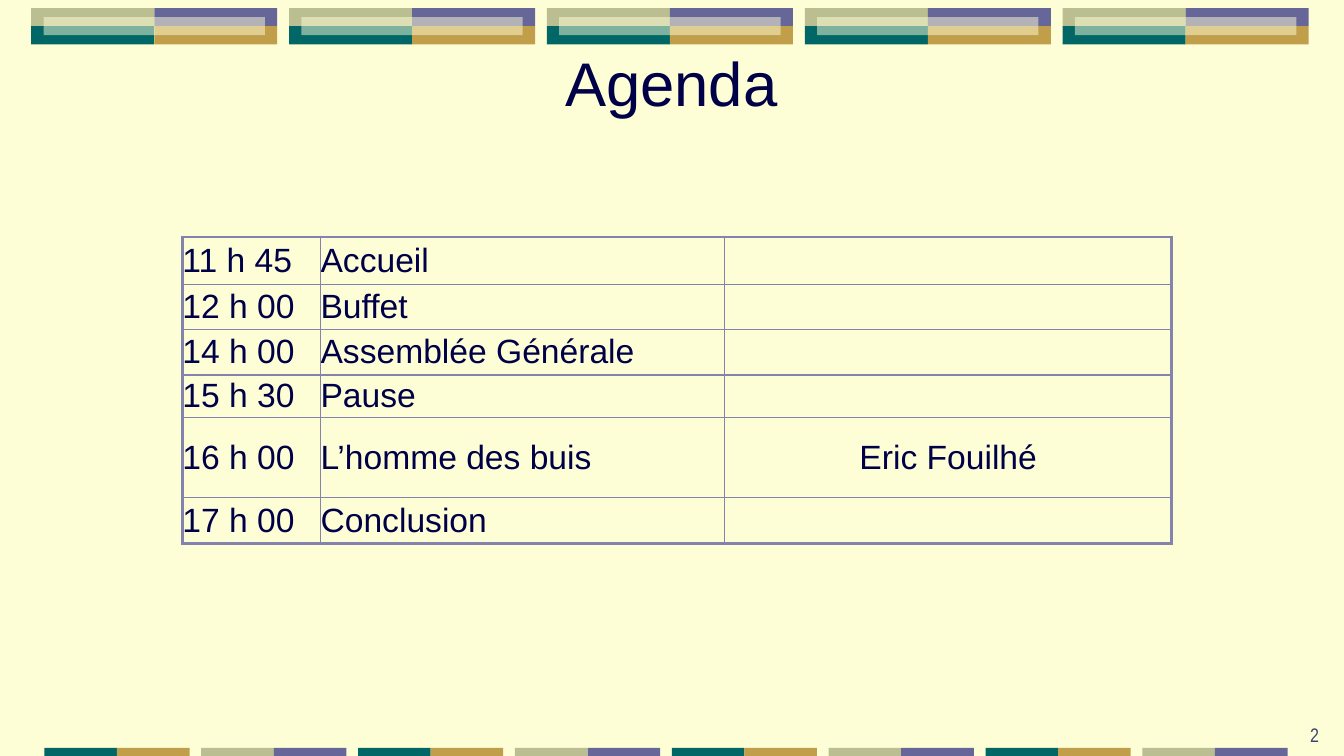
from lxml.etree import SubElement
from pptx import Presentation
from pptx.dml.color import RGBColor
from pptx.enum.shapes import MSO_SHAPE
from pptx.enum.text import MSO_ANCHOR, PP_ALIGN
from pptx.oxml import parse_xml
from pptx.oxml.ns import nsdecls, qn
from pptx.util import Inches, Pt

TITLE = "Agenda"
PAGE_NUMBER = "2"
AGENDA = [
    ("11 h 45", "Accueil", ""),
    ("12 h 00", "Buffet", ""),
    ("14 h 00", "Assemblée Générale", ""),
    ("15 h 30", "Pause", ""),
    ("16 h 00", "L’homme des buis", "Eric Fouilhé"),
    ("17 h 00", "Conclusion", ""),
]

CREAM = RGBColor(0xFE, 0xFE, 0xD6)
NAVY = RGBColor(0x00, 0x00, 0x48)
SLATE = RGBColor(0x40, 0x41, 0x76)
VIOLET = RGBColor(0x66, 0x66, 0x99)
OCHRE = RGBColor(0xC0, 0x9E, 0x4A)
TEAL = RGBColor(0x00, 0x66, 0x66)
SAGE = RGBColor(0xBA, 0xBE, 0x90)
BORDER = RGBColor(0x83, 0x83, 0xAD)

WIDTH, HEIGHT = 13.33, 7.5
COLUMNS = (1.37, 4.01, 4.43)
ROWS = (0.47, 0.45, 0.45, 0.42, 0.8, 0.45)
TABLE_LEFT, TABLE_TOP = 1.81, 2.35
THICK, THIN = 2.25, 1

BANNERS, BANNER_FIRST, BANNER_LAST, BANNER_TOP = 5, 0.31, 10.54, 0.08
TILE_WIDTH, TILE_HEIGHT = 1.22, 0.18
BANNER_TILES = ((SAGE, VIOLET), (TEAL, OCHRE))
FOOTERS, FOOTER_FIRST, FOOTER_LAST = 8, 0.44, 11.33
FOOTER_TILE_WIDTH, FOOTER_TILE_HEIGHT = 0.72, 0.08
FOOTER_PAIRS = ((TEAL, OCHRE), (SAGE, VIOLET))


def box(*lengths):
    return [Inches(length) for length in lengths]


def add_tile(group, color, left, top, width, height):
    tile = group.shapes.add_shape(MSO_SHAPE.RECTANGLE, *box(left, top, width, height))
    tile.shadow.inherit = False
    tile.fill.solid()
    tile.fill.fore_color.rgb = color
    tile.line.fill.background()
    return tile


def style(paragraph, font_name, size, color, align):
    paragraph.alignment = align
    paragraph.font.name = font_name
    paragraph.font.size = Pt(size)
    paragraph.font.color.rgb = color


def add_banners(slide):
    pitch = (BANNER_LAST - BANNER_FIRST) / (BANNERS - 1)
    for index in range(BANNERS):
        left = BANNER_FIRST + index * pitch
        group = slide.shapes.add_group_shape()
        for row, colors in enumerate(BANNER_TILES):
            for column, color in enumerate(colors):
                add_tile(group, color, left + column * TILE_WIDTH,
                         BANNER_TOP + row * TILE_HEIGHT, TILE_WIDTH, TILE_HEIGHT)
        veil = add_tile(group, CREAM, left + TILE_WIDTH / 10,
                        BANNER_TOP + TILE_HEIGHT / 2, TILE_WIDTH * 1.8, TILE_HEIGHT)
        rgb = veil.fill._xPr.find(".//" + qn("a:srgbClr"))
        SubElement(rgb, qn("a:alpha"), val="50000")


def add_footers(slide):
    pitch = (FOOTER_LAST - FOOTER_FIRST) / (FOOTERS - 1)
    for index in range(FOOTERS):
        group = slide.shapes.add_group_shape()
        for column, color in enumerate(FOOTER_PAIRS[index % 2]):
            add_tile(group, color,
                     FOOTER_FIRST + index * pitch + column * FOOTER_TILE_WIDTH,
                     HEIGHT - FOOTER_TILE_HEIGHT, FOOTER_TILE_WIDTH, FOOTER_TILE_HEIGHT)


def set_borders(cell, row, column):
    outer = (
        ("L", column == 0),
        ("R", column == len(COLUMNS) - 1),
        ("T", row == 0),
        ("B", row == len(ROWS) - 1),
    )
    properties = cell._tc.get_or_add_tcPr()
    for position, (side, is_outer) in enumerate(outer):
        width = Pt(THICK if is_outer else THIN)
        properties.insert(position, parse_xml(
            f'<a:ln{side} {nsdecls("a")} w="{width}"><a:solidFill>'
            f'<a:srgbClr val="{BORDER}"/></a:solidFill></a:ln{side}>'))


def add_agenda(slide):
    agenda = slide.shapes.add_table(
        len(ROWS), len(COLUMNS),
        *box(TABLE_LEFT, TABLE_TOP, sum(COLUMNS), sum(ROWS))).table
    agenda.first_row = agenda.horz_banding = False
    for column, width in enumerate(COLUMNS):
        agenda.columns[column].width = Inches(width)
    for row, (height, entries) in enumerate(zip(ROWS, AGENDA)):
        agenda.rows[row].height = Inches(height)
        for column, entry in enumerate(entries):
            cell = agenda.cell(row, column)
            cell.text = entry
            cell.fill.background()
            cell.vertical_anchor = MSO_ANCHOR.MIDDLE
            cell.margin_left = cell.margin_right = 0
            cell.margin_top = cell.margin_bottom = 0
            align = PP_ALIGN.CENTER if column == 2 else PP_ALIGN.LEFT
            style(cell.text_frame.paragraphs[0], "Arial", 24, NAVY, align)
            set_borders(cell, row, column)


def main():
    deck = Presentation()
    deck.slide_width, deck.slide_height = box(WIDTH, HEIGHT)
    slide = deck.slides.add_slide(deck.slide_layouts[5])
    slide.background.fill.solid()
    slide.background.fill.fore_color.rgb = CREAM

    add_banners(slide)
    add_footers(slide)

    number = slide.shapes.add_textbox(*box(10.4, 7.18, 2.78, 0.27)).text_frame
    number.word_wrap = True
    number.vertical_anchor = MSO_ANCHOR.BOTTOM
    number.text = PAGE_NUMBER
    style(number.paragraphs[0], "Arial Narrow", 14, SLATE, PP_ALIGN.RIGHT)

    title = slide.shapes.title
    title.left, title.top, title.width, title.height = box(2.41, 0.52, 8.5, 0.58)
    title.text_frame.text = TITLE
    title.text_frame.vertical_anchor = MSO_ANCHOR.MIDDLE
    style(title.text_frame.paragraphs[0], "Arial", 44, NAVY, PP_ALIGN.CENTER)

    add_agenda(slide)
    deck.save("out.pptx")


if __name__ == "__main__":
    main()
